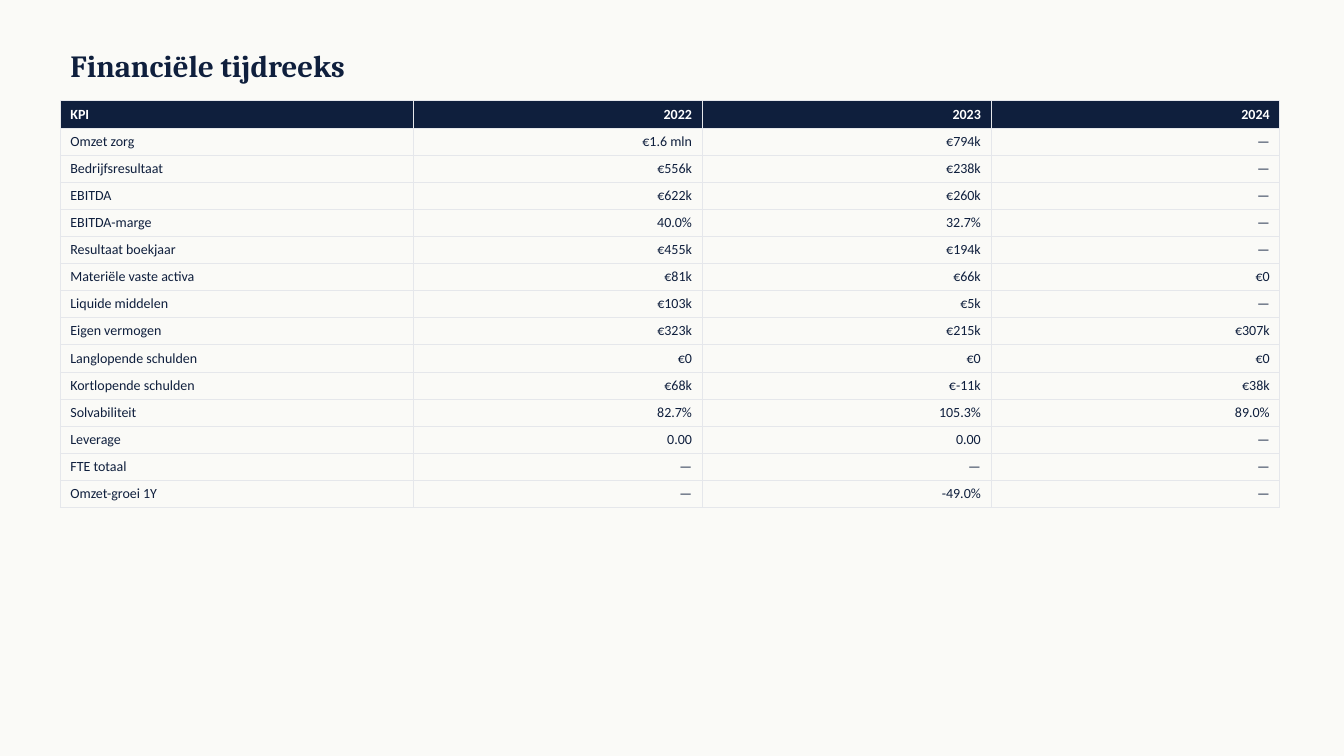
from dataclasses import dataclass

from lxml.etree import SubElement
from pptx import Presentation
from pptx.dml.color import RGBColor
from pptx.enum.text import MSO_ANCHOR, MSO_AUTO_SIZE, PP_ALIGN
from pptx.oxml.ns import qn
from pptx.slide import Slide
from pptx.table import _Cell
from pptx.text.text import _Paragraph
from pptx.util import Cm, Pt

COLORS = {"paper": "FAFAF7", "navy": "0F1F3D", "white": "FFFFFF", "rule": "E5E7EB"}
YEARS = ("2022", "2023", "2024")
LEFT = Cm(1.52)
KPI_WIDTH, YEAR_WIDTH, ROW_HEIGHT = Cm(8.89), Cm(7.28), Cm(0.68)


@dataclass(frozen=True)
class Kpi:
    name: str
    values: tuple[str, str, str]


KPIS = [
    Kpi("Omzet zorg", ("€1.6 mln", "€794k", "—")),
    Kpi("Bedrijfsresultaat", ("€556k", "€238k", "—")),
    Kpi("EBITDA", ("€622k", "€260k", "—")),
    Kpi("EBITDA-marge", ("40.0%", "32.7%", "—")),
    Kpi("Resultaat boekjaar", ("€455k", "€194k", "—")),
    Kpi("Materiële vaste activa", ("€81k", "€66k", "€0")),
    Kpi("Liquide middelen", ("€103k", "€5k", "—")),
    Kpi("Eigen vermogen", ("€323k", "€215k", "€307k")),
    Kpi("Langlopende schulden", ("€0", "€0", "€0")),
    Kpi("Kortlopende schulden", ("€68k", "€-11k", "€38k")),
    Kpi("Solvabiliteit", ("82.7%", "105.3%", "89.0%")),
    Kpi("Leverage", ("0.00", "0.00", "—")),
    Kpi("FTE totaal", ("—", "—", "—")),
    Kpi("Omzet-groei 1Y", ("—", "-49.0%", "—")),
]


def add_run(p: _Paragraph, text: str, font: str, size: float, color: str, bold: bool) -> None:
    r = p.add_run()
    r.text = text
    r.font.name, r.font.size, r.font.bold = font, Pt(size), bold
    r.font.color.rgb = RGBColor.from_string(COLORS[color])


def add_borders(cell: _Cell) -> None:
    """Rule all four sides; call before filling, as the schema puts lines first."""
    tc_pr = cell._tc.get_or_add_tcPr()
    for side in ("lnL", "lnR", "lnT", "lnB"):
        ln = SubElement(tc_pr, qn(f"a:{side}"), w=str(Pt(0.5)))
        fill = SubElement(ln, qn("a:solidFill"))
        SubElement(fill, qn("a:srgbClr"), val=COLORS["rule"])


def fill_cell(cell: _Cell, text: str, is_header: bool, is_value: bool) -> None:
    add_borders(cell)
    if is_header:
        cell.fill.solid()
        cell.fill.fore_color.rgb = RGBColor.from_string(COLORS["navy"])
    else:
        cell.fill.background()
    p = cell.text_frame.paragraphs[0]
    p.alignment = PP_ALIGN.RIGHT if is_value else PP_ALIGN.LEFT
    add_run(p, text, "Calibri", 10, "white" if is_header else "navy", is_header)


def add_title(s: Slide, text: str) -> None:
    sp = s.shapes.title
    sp.left, sp.top, sp.width, sp.height = LEFT, Cm(1.02), Cm(30.48), Cm(1.27)
    tf = sp.text_frame
    tf.auto_size = MSO_AUTO_SIZE.NONE
    tf.vertical_anchor = MSO_ANCHOR.MIDDLE
    p = tf.paragraphs[0]
    p.alignment = PP_ALIGN.LEFT
    add_run(p, text, "Cambria", 22, "navy", True)


def add_kpi_table(s: Slide) -> None:
    rows = [("KPI", *YEARS)] + [(kpi.name, *kpi.values) for kpi in KPIS]
    widths = [KPI_WIDTH] + [YEAR_WIDTH] * len(YEARS)
    table = s.shapes.add_table(len(rows), len(widths), LEFT, Cm(2.54),
                               sum(widths), ROW_HEIGHT * len(rows)).table
    table.horz_banding = False
    for column, width in zip(table.columns, widths):
        column.width = width
    for i, row in enumerate(rows):
        for j, text in enumerate(row):
            fill_cell(table.cell(i, j), text, is_header=i == 0, is_value=j > 0)


def main() -> None:
    prs = Presentation()
    prs.slide_width, prs.slide_height = Cm(33.87), Cm(19.05)
    s = prs.slides.add_slide(prs.slide_layouts.get_by_name("Title Only"))
    s.background.fill.solid()
    s.background.fill.fore_color.rgb = RGBColor.from_string(COLORS["paper"])
    add_title(s, "Financiële tijdreeks")
    add_kpi_table(s)
    prs.save("out.pptx")


if __name__ == "__main__":
    main()
